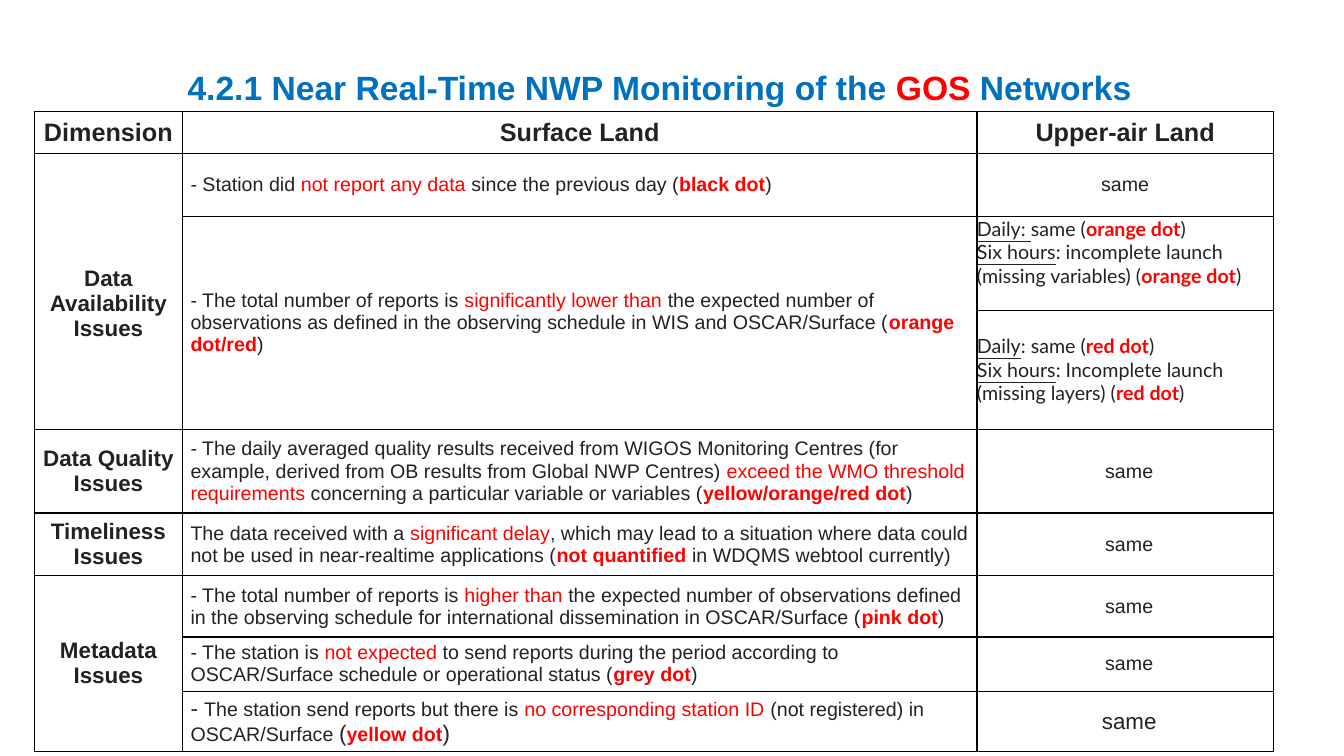
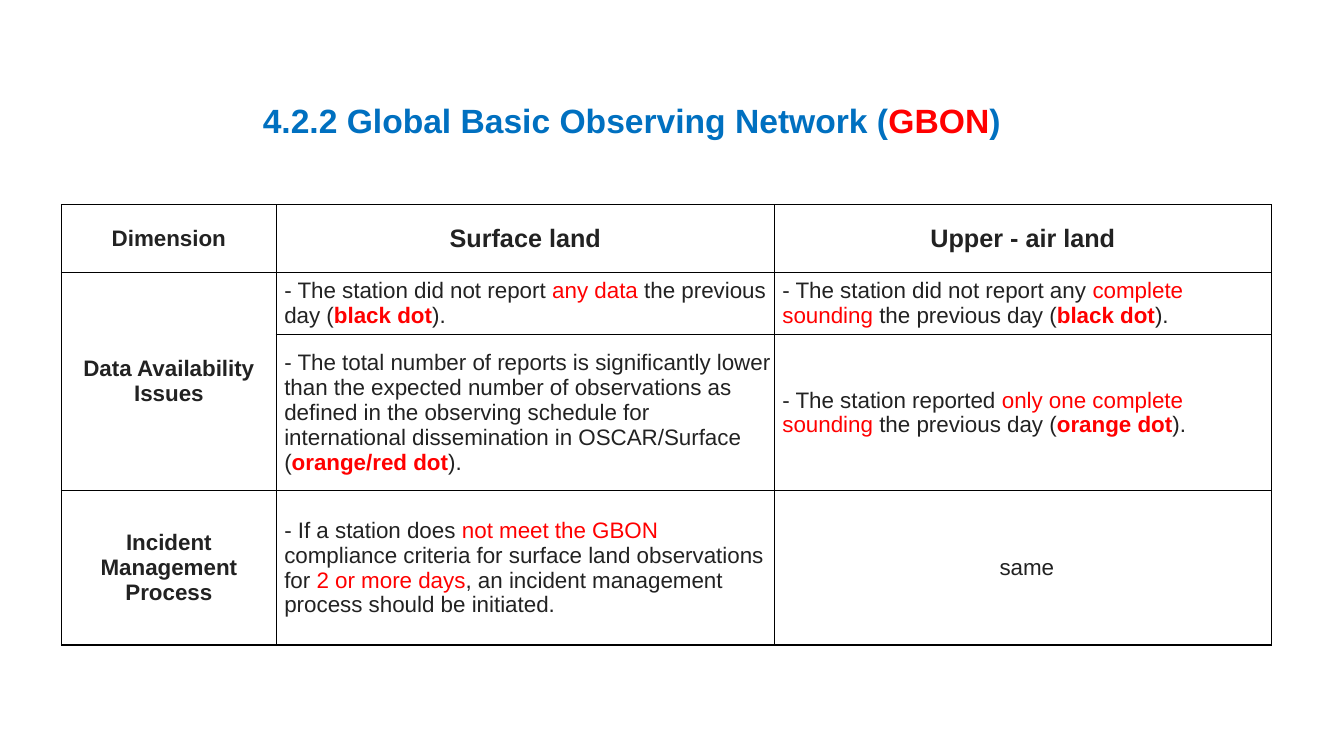
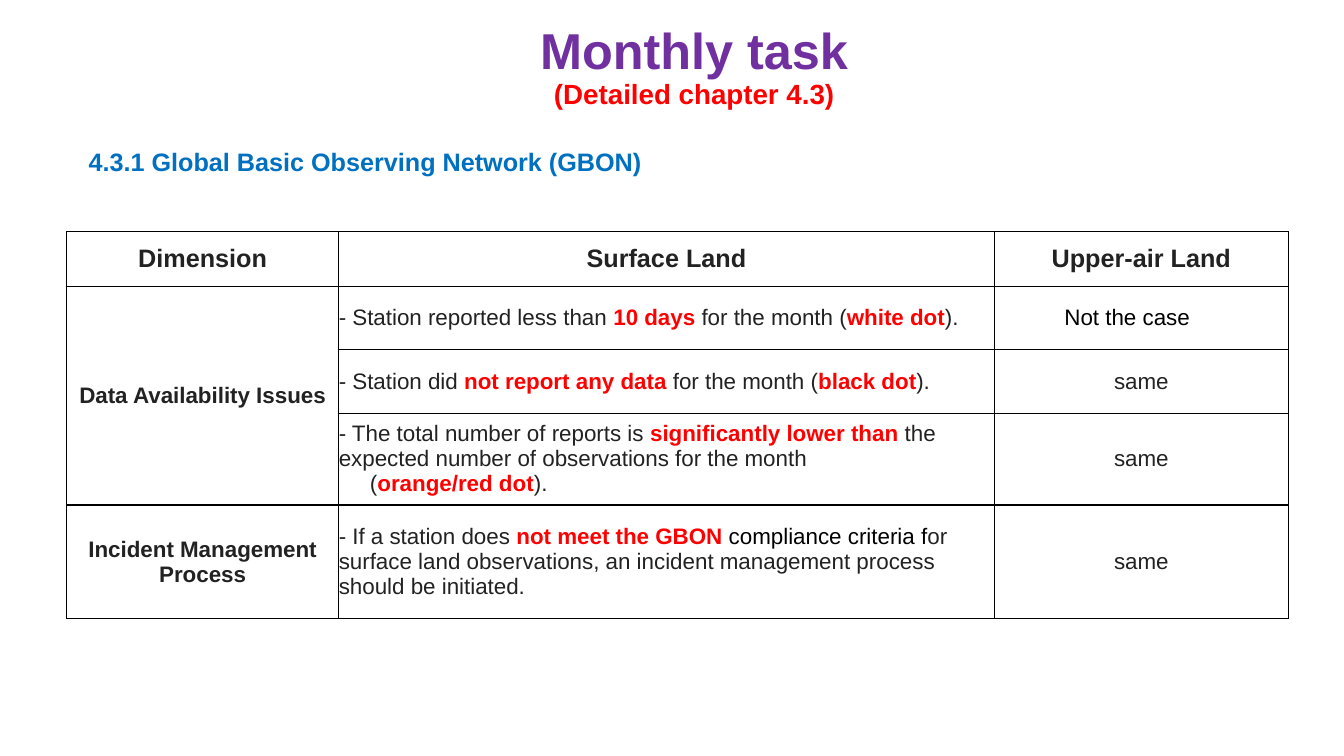
from dataclasses import dataclass, replace

from lxml import etree
from pptx import Presentation
from pptx.dml.color import RGBColor
from pptx.enum import text as t
from pptx.oxml import ns
from pptx.util import Inches, Pt

INK = RGBColor(0x22, 0x22, 0x22)
BLACK = RGBColor(0x00, 0x00, 0x00)
RED = RGBColor(0xFF, 0x00, 0x00)
BLUE = RGBColor(0x00, 0x70, 0xC0)
PURPLE = RGBColor(0x70, 0x30, 0xA0)
LEFT, CENTER = t.PP_ALIGN.LEFT, t.PP_ALIGN.CENTER
TOP, MIDDLE = t.MSO_ANCHOR.TOP, t.MSO_ANCHOR.MIDDLE
TITLE_ONLY = 5
BODY_INDENT = 0.08


@dataclass(frozen=True)
class Span:
    text: str
    color: RGBColor = INK
    bold: bool = False
    size: float | None = None
    underline: bool = False


@dataclass(frozen=True)
class Para:
    spans: tuple[Span, ...]
    size: float = 16
    font: str = "Arial"
    align: t.PP_ALIGN = LEFT
    indent: float = 0
    line_spacing: float = 1


@dataclass(frozen=True)
class Cell:
    paras: tuple[Para, ...]
    row_span: int = 1
    anchor: t.MSO_ANCHOR = MIDDLE
    left: float = 0
    right: float = 0
    top: float = 0


Rows = list[list[Cell | None]]


def red(text: str) -> Span:
    return Span(text, RED)


def alert(text: str) -> Span:
    return Span(text, RED, bold=True)


def line(*parts: Span | str, **style) -> Para:
    """Make a paragraph; bare strings become plain dark spans."""
    spans = tuple(Span(part) if isinstance(part, str) else part for part in parts)
    return Para(spans, **style)


def label(text: str, size: float = 16, row_span: int = 1, top: float = 0) -> Cell:
    return Cell((line(Span(text, bold=True), size=size, align=CENTER),), row_span, top=top)


def body(*parts: Span | str, size: float = 16, row_span: int = 1, left: float = BODY_INDENT) -> Cell:
    return Cell((line(*parts, size=size),), row_span, left=left)


def same(size: float = 16, left: float = 0) -> Cell:
    return Cell((line("same", size=size, align=CENTER),), left=left)


def launch_note(daily: str, six_hours: str, dot: str, anchor: t.MSO_ANCHOR) -> Cell:
    style = {"size": 14, "font": "Lato"}
    return Cell((
        line(Span(daily, underline=True), "same (" if daily.endswith(" ") else ": same (",
             alert(dot), ")", **style),
        line(Span("Six hours", underline=True), f": {six_hours} (", alert(dot), ")", **style),
    ), anchor=anchor)


def write_paras(frame, paras: tuple[Para, ...]) -> None:
    for index, source in enumerate(paras):
        para = frame.paragraphs[0] if index == 0 else frame.add_paragraph()
        para.alignment = source.align
        para.line_spacing = source.line_spacing
        para.space_before = para.space_after = Pt(0)
        if source.indent:
            para._p.get_or_add_pPr().set("marL", str(Inches(source.indent)))
        for span in source.spans:
            run = para.add_run()
            run.text = span.text
            font = run.font
            font.name, font.size = source.font, Pt(span.size or source.size)
            font.bold, font.underline = span.bold, span.underline
            font.color.rgb = span.color


def set_borders(cell) -> None:
    properties = cell._tc.get_or_add_tcPr()
    for side in ("lnL", "lnR", "lnT", "lnB"):
        edge = etree.SubElement(properties, ns.qn(f"a:{side}"), w=str(Pt(1)))
        fill = etree.SubElement(edge, ns.qn("a:solidFill"))
        etree.SubElement(fill, ns.qn("a:srgbClr"), val=str(BLACK))


def place(shape, box: tuple[float, float, float, float]) -> None:
    shape.left, shape.top, shape.width, shape.height = map(Inches, box)


def add_page(deck, box: tuple[float, float, float, float], *paras: Para):
    """Add a slide whose title holds the given paragraphs."""
    page = deck.slides.add_slide(deck.slide_layouts[TITLE_ONLY])
    title = page.shapes.title
    place(title, box)
    frame = title.text_frame
    frame.word_wrap = True
    frame.auto_size = t.MSO_AUTO_SIZE.NONE
    frame.vertical_anchor = MIDDLE
    write_paras(frame, paras)
    return page


def add_grid(page, left: float, top: float, widths: list[float],
             heights: list[float], rows: Rows) -> None:
    """Add a bordered table; None marks a cell covered by the one above."""
    table = page.shapes.add_table(
        len(heights), len(widths), Inches(left), Inches(top),
        Inches(sum(widths)), Inches(sum(heights))).table
    table.first_row = table.horz_banding = False
    for column, width in zip(table.columns, widths):
        column.width = Inches(width)
    for row, height in zip(table.rows, heights):
        row.height = Inches(height)
    for r, row in enumerate(rows):
        for c, source in enumerate(row):
            cell = table.cell(r, c)
            set_borders(cell)
            cell.fill.background()
            if source is None:
                continue
            cell.margin_left, cell.margin_right = Inches(source.left), Inches(source.right)
            cell.margin_top, cell.margin_bottom = Inches(source.top), 0
            cell.vertical_anchor = source.anchor
            write_paras(cell.text_frame, source.paras)
            if source.row_span > 1:
                cell.merge(table.cell(r + source.row_span - 1, c))


def section_title(*spans: Span, align: t.PP_ALIGN = LEFT, size: float = 24) -> Para:
    return Para(tuple(replace(span, bold=True) for span in spans), size=size, align=align)


def build_gos_page(deck) -> None:
    page = add_page(deck, (1.76, 0.61, 9.93, 0.5), section_title(
        Span("4.2.1 Near Real-Time NWP Monitoring of the ", BLUE),
        red("GOS"), Span(" Networks", BLUE)))
    rows: Rows = [
        [label("Dimension", 18), label("Surface Land", 18), label("Upper-air Land", 18)],
        [label("Data Availability Issues", row_span=3, top=0.25),
         body("- Station did ", red("not report any data "), "since the previous day (",
              alert("black dot"), ")", size=14),
         same(14)],
        [None,
         body("- The total number of reports is ", red("significantly lower than "),
              "the expected number of observations as defined in the observing schedule "
              "in WIS and OSCAR/Surface (", alert("orange dot/red"), ")", size=14, row_span=2),
         launch_note("Daily: ", "incomplete launch (missing variables)", "orange dot", TOP)],
        [None, None,
         launch_note("Daily", "Incomplete launch (missing layers)", "red dot", MIDDLE)],
        [label("Data Quality Issues"),
         body("- The daily averaged quality results received from WIGOS Monitoring Centres "
              "(for example, derived from OB results from Global NWP Centres) ",
              red("exceed the WMO threshold requirements "),
              "concerning a particular variable or variables (",
              alert("yellow/orange/red dot"), ")", size=14),
         same(14, BODY_INDENT)],
        [label("Timeliness Issues"),
         body("The data received with a ", red("significant delay"),
              ", which may lead to a situation where data could not be used in "
              "near-realtime applications (", alert("not quantified "),
              "in WDQMS webtool currently)", size=14),
         same(14, BODY_INDENT)],
        [label("Metadata Issues", row_span=3),
         body("- The total number of reports is ", red("higher than "),
              "the expected number of observations defined in the observing schedule for "
              "international dissemination in OSCAR/Surface (", alert("pink dot"), ")", size=14),
         same(14, BODY_INDENT)],
        [None,
         body("- The station is ", red("not expected "),
              "to send reports during the period according to OSCAR/Surface schedule or "
              "operational status (", alert("grey dot"), ")", size=14),
         same(14, BODY_INDENT)],
        [None,
         body(Span("- ", size=16), "The station send reports but there is ",
              red("no corresponding station ID "), "(not registered) in OSCAR/Surface ",
              Span("(", size=16), alert("yellow dot"), Span(")", size=16), size=14),
         same(16, BODY_INDENT)],
    ]
    add_grid(page, 0.34, 1.11, [1.47, 7.88, 2.94],
             [0.41, 0.63, 0.93, 1.18, 0.83, 0.62, 0.61, 0.54, 0.6], rows)


def build_daily_gbon_page(deck) -> None:
    page = add_page(deck, (1.3, 0.94, 9.93, 0.5), section_title(
        Span("4.2.2 Global Basic Observing Network (", BLUE),
        red("GBON"), Span(")", BLUE), align=CENTER))
    rows: Rows = [
        [label("Dimension"), label("Surface land", 18), label("Upper - air land", 18)],
        [label("Data Availability Issues", row_span=2),
         body("- The station did not report ", red("any data"), " the previous day (",
              alert("black dot"), ")."),
         body("- The station did not report any ", red("complete sounding "),
              "the previous day (", alert("black dot"), ").")],
        [None,
         body("- The total number of reports is significantly lower than the expected number "
              "of observations as defined in the observing schedule for international "
              "dissemination in OSCAR/Surface (", alert("orange/red dot"), ")."),
         body("- The station reported ", red("only one complete sounding "),
              "the previous day (", alert("orange dot"), ").")],
        [label("Incident Management Process"),
         body("- If a station does ", red("not meet the GBON "),
              "compliance criteria for surface land observations for ",
              red("2 or more days"),
              ", an incident management process should be initiated."),
         same(left=BODY_INDENT)],
    ]
    add_grid(page, 0.61, 2.03, [2.13, 4.94, 4.93], [0.67, 0.62, 1.55, 1.53], rows)


def build_monthly_page(deck) -> None:
    title_style = {"align": CENTER, "line_spacing": 0.9}
    page = add_page(
        deck, (0.14, 0.2, 13.49, 0.95),
        line(Span("Monthly task", PURPLE, bold=True), size=36, **title_style),
        line(alert("(Detailed chapter 4.3)"), size=19.8, **title_style))
    rows: Rows = [
        [label("Dimension", 18), label("Surface Land", 18), label("Upper-air Land", 18)],
        [label("Data Availability Issues", row_span=3),
         body("- Station reported less than ", alert("10 days"), " for the month (",
              alert("white dot"), ").", left=0),
         Cell((line(Span("Not the case", BLACK), align=CENTER),), right=0.28)],
        [None,
         body("- Station did ", alert("not report any data "), "for the month (",
              alert("black dot"), ").", left=0),
         same()],
        [None,
         Cell((line("- The total number of reports is ", alert("significantly lower than"),
                    " the expected number of observations for the month"),
               line("(", alert("orange/red dot"), ").", indent=0.31))),
         same()],
        [label("Incident Management Process"),
         body("- If a station does ", alert("not meet the GBON "),
              Span("compliance criteria f", BLACK),
              "or surface land observations, an incident management process "
              "should be initiated.", left=0),
         same()],
    ]
    add_grid(page, 0.66, 2.3, [2.7, 6.5, 2.92], [0.54, 0.63, 0.63, 0.91, 1.13], rows)
    heading = page.shapes.add_textbox(*map(Inches, (0.78, 1.4, 6.82, 0.4)))
    heading.text_frame.word_wrap = True
    write_paras(heading.text_frame, (section_title(
        Span("4.3.1 Global Basic Observing Network (GBON)", BLUE), size=18),))


def main() -> None:
    deck = Presentation()
    deck.slide_width, deck.slide_height = Inches(13.33), Inches(7.5)
    build_gos_page(deck)
    build_daily_gbon_page(deck)
    build_monthly_page(deck)
    deck.save("out.pptx")


if __name__ == "__main__":
    main()
